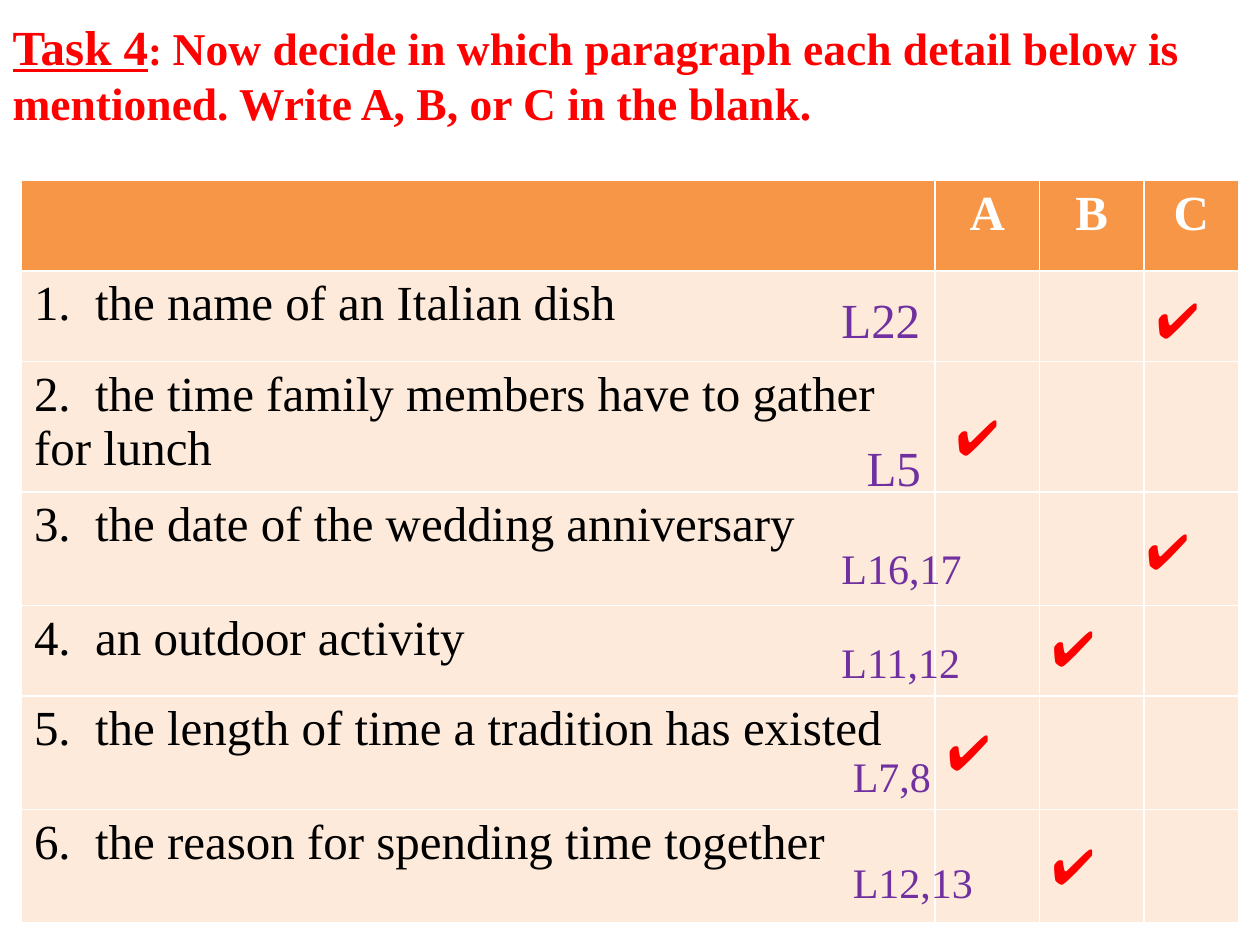
from dataclasses import dataclass

from pptx import Presentation
from pptx.dml.color import RGBColor
from pptx.enum.text import MSO_ANCHOR, MSO_AUTO_SIZE, PP_ALIGN
from pptx.util import Inches, Pt


@dataclass(frozen=True)
class Theme:
    font: str = "Times New Roman"
    red: str = "FF0000"
    purple: str = "7030A0"
    white: str = "FFFFFF"
    black: str = "000000"
    header_fill: str = "F79646"
    row_fill: str = "FDEADA"
    large: int = 28
    medium: int = 26
    small: int = 24


THEME = Theme()

COLUMN_WIDTHS = (7.25, 0.83, 0.83, 0.75)
ROW_HEIGHTS = (0.72, 0.72, 1.03, 0.9, 0.72, 0.9, 0.9)
HEADINGS = ("", "A", "B", "C")
DETAILS = (
    "the name of an Italian dish",
    "the time family members have to gather for lunch",
    "the date of the wedding anniversary",
    "an outdoor activity",
    "the length of time a tradition has existed",
    "the reason for spending time together",
)
# Per detail: check mark (left, top), then line reference, (left, top, width), size
ANSWERS = (
    ((9.08, 2.25), "L22", (6.58, 2.25, 0.83), THEME.large),
    ((7.49, 3.18), "L5", (6.78, 3.42, 0.64), THEME.large),
    ((9, 4.08), "L16,17", (6.58, 4.26, 1.16), THEME.small),
    ((8.25, 4.85), "L11,12", (6.58, 5, 1.15), THEME.small),
    ((7.42, 5.68), "L7,8", (6.67, 5.91, 0.83), THEME.small),
    ((8.25, 6.58), "L12,13", (6.67, 6.75, 1.16), THEME.small),
)


def add_run(paragraph, text, color, size, **formats):
    run = paragraph.add_run()
    run.text = text
    values = {"name": THEME.font, "size": Pt(size), "bold": False, **formats}
    for name, value in values.items():
        setattr(run.font, name, value)
    run.font.color.rgb = RGBColor.from_string(color)


def add_title(slide):
    title = slide.shapes.title
    place = {"left": 0, "top": 0.08, "width": 10, "height": 1.01}
    for name, value in place.items():
        setattr(title, name, Inches(value))
    frame = title.text_frame
    formats = {"word_wrap": True, "vertical_anchor": MSO_ANCHOR.TOP,
               "auto_size": MSO_AUTO_SIZE.SHAPE_TO_FIT_TEXT}
    for name, value in formats.items():
        setattr(frame, name, value)
    paragraph = frame.paragraphs[0]
    paragraph.alignment = PP_ALIGN.LEFT
    add_run(paragraph, "Task 4", THEME.red, THEME.large, bold=True, underline=True)
    add_run(paragraph, ": ", THEME.red, THEME.small, bold=True)
    add_run(paragraph, "Now decide in which paragraph each detail below is "
            "mentioned. Write A, B, or C in the blank.",
            THEME.red, THEME.medium, bold=True)


def fill_cells(row, color):
    for cell in row.cells:
        cell.fill.solid()
        cell.fill.fore_color.rgb = RGBColor.from_string(color)


def add_detail_table(slide):
    table = slide.shapes.add_table(
        len(ROW_HEIGHTS), len(COLUMN_WIDTHS), Inches(0.17), Inches(1.43),
        Inches(sum(COLUMN_WIDTHS)), Inches(sum(ROW_HEIGHTS))).table
    for column, width in zip(table.columns, COLUMN_WIDTHS):
        column.width = Inches(width)
    for index, (row, height) in enumerate(zip(table.rows, ROW_HEIGHTS)):
        row.height = Inches(height)
        fill_cells(row, THEME.row_fill if index else THEME.header_fill)
    for index, heading in enumerate(HEADINGS):
        if heading:
            paragraph = table.cell(0, index).text_frame.paragraphs[0]
            paragraph.alignment = PP_ALIGN.CENTER
            add_run(paragraph, heading, THEME.white, THEME.large, bold=True)
    for number, detail in enumerate(DETAILS, 1):
        paragraph = table.cell(number, 0).text_frame.paragraphs[0]
        add_run(paragraph, f"{number}.  {detail}", THEME.black, THEME.large)


def add_label(slide, text, left, top, width, color, size):
    """Add a one-line text box whose height follows its type size."""
    height = 0.57 if size == THEME.large else 0.5
    label = slide.shapes.add_textbox(*map(Inches, (left, top, width, height)))
    frame = label.text_frame
    frame.word_wrap = False
    frame.auto_size = MSO_AUTO_SIZE.SHAPE_TO_FIT_TEXT
    add_run(frame.paragraphs[0], text, color, size)


def main():
    presentation = Presentation()
    presentation.slide_width = Inches(10)
    presentation.slide_height = Inches(7.5)
    slide = presentation.slides.add_slide(presentation.slide_layouts[5])
    add_title(slide)
    add_detail_table(slide)
    for mark_place, reference, reference_place, size in ANSWERS:
        add_label(slide, "✔", *mark_place, 0.59, THEME.red, THEME.large)
        add_label(slide, reference, *reference_place, THEME.purple, size)
    presentation.save("out.pptx")


if __name__ == "__main__":
    main()
